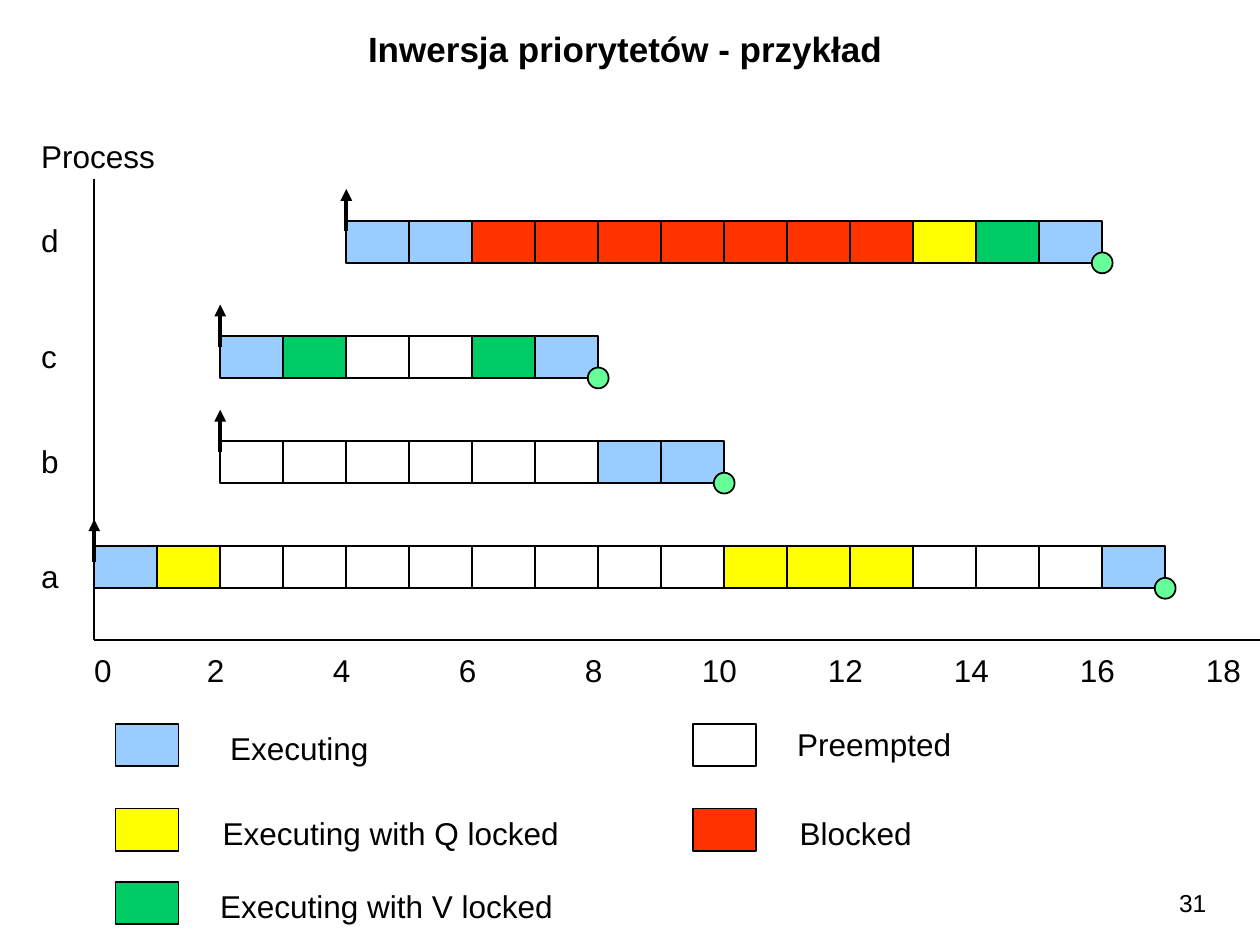
from dataclasses import dataclass

from lxml.etree import SubElement
from pptx import Presentation
from pptx.dml.color import RGBColor
from pptx.enum.shapes import MSO_CONNECTOR, MSO_SHAPE
from pptx.enum.text import MSO_AUTO_SIZE, PP_ALIGN
from pptx.oxml.ns import qn
from pptx.util import Cm, Pt

BLACK = RGBColor(0x00, 0x00, 0x00)
BLUE = RGBColor(0x99, 0xCC, 0xFF)
YELLOW = RGBColor(0xFF, 0xFF, 0x00)
GREEN = RGBColor(0x00, 0xCC, 0x66)
RED = RGBColor(0xFF, 0x33, 0x00)
MINT = RGBColor(0x66, 0xFF, 0x99)

# E executing, Q / V executing with that lock, P preempted, B blocked
STATE_COLORS = {"E": BLUE, "Q": YELLOW, "V": GREEN, "P": None, "B": RED}

# All lengths are in centimetres.
SLIDE_WIDTH, SLIDE_HEIGHT = 25.4, 19.05
AXIS_LEFT, AXIS_TOP, AXIS_BOTTOM = 1.9, 3.6, 12.9
CELL_WIDTH, CELL_HEIGHT = 1.27, 0.85
END_DIAMETER = 0.42
LABEL_LEFT, LABEL_HEIGHT = 0.58, 1.02


@dataclass
class Process:
    name: str
    start: int
    states: str
    top: float
    label_top: float
    arrow_top: float


@dataclass
class LegendEntry:
    state: str
    text: str
    left: float
    top: float
    text_left: float
    text_top: float
    text_width: float


PROCESSES = [
    Process("d", 4, "EEBBBBBBBQVE", 4.45, 4.34, 3.81),
    Process("c", 2, "EVPPVE", 6.77, 6.66, 6.14),
    Process("b", 2, "PPPPPPEE", 8.89, 8.79, 8.26),
    Process("a", 0, "EQPPPPPPPPQQQPPPE", 11.01, 11.1, 10.47),
]

LEGEND = [
    LegendEntry("E", "Executing", 2.33, 14.6, 4.39, 14.58, 3.3),
    LegendEntry("Q", "Executing with Q locked", 2.33, 16.3, 4.24, 16.28, 7.29),
    LegendEntry("V", "Executing with V locked", 2.33, 17.78, 4.19, 17.75, 7.21),
    LegendEntry("P", "Preempted", 13.97, 14.6, 15.82, 14.5, 3.61),
    LegendEntry("B", "Blocked", 13.97, 16.3, 15.87, 16.28, 2.77),
]


def time_x(time: int) -> float:
    """Horizontal place of a moment on the time axis."""
    return AXIS_LEFT + time * CELL_WIDTH


def add_text(page, text: str, left: float, top: float, width: float,
             height: float = LABEL_HEIGHT, size: int = 18, bold: bool = False,
             align=PP_ALIGN.LEFT, wrap: bool = False) -> None:
    box = page.shapes.add_textbox(Cm(left), Cm(top), Cm(width), Cm(height))
    box.text_frame.word_wrap = wrap
    box.text_frame.auto_size = MSO_AUTO_SIZE.NONE
    para = box.text_frame.paragraphs[0]
    para.alignment = align
    span = para.add_run()
    span.text = text
    for name, value in {"name": "Arial", "size": Pt(size), "bold": bold}.items():
        setattr(span.font, name, value)
    span.font.color.rgb = BLACK


def add_outlined(page, kind, left: float, top: float, width: float,
                 height: float, color: RGBColor | None) -> None:
    """Draw a black-edged shape, unfilled when there is no colour."""
    shape = page.shapes.add_shape(kind, Cm(left), Cm(top), Cm(width), Cm(height))
    shape.shadow.inherit = False
    if color is None:
        shape.fill.background()
    else:
        shape.fill.solid()
        shape.fill.fore_color.rgb = color
    shape.line.color.rgb = BLACK
    shape.line.width = Pt(1)


def add_cell(page, left: float, top: float, state: str) -> None:
    add_outlined(page, MSO_SHAPE.RECTANGLE, left, top, CELL_WIDTH, CELL_HEIGHT,
                 STATE_COLORS[state])


def add_line(page, x1: float, y1: float, x2: float, y2: float,
             width: float = 1, arrow: bool = False) -> None:
    """Draw a straight line, with an arrowhead at its first point if asked."""
    line = page.shapes.add_connector(MSO_CONNECTOR.STRAIGHT,
                                     Cm(x1), Cm(y1), Cm(x2), Cm(y2))
    line.line.color.rgb = BLACK
    line.line.width = Pt(width)
    if arrow:
        SubElement(line.line._get_or_add_ln(), qn("a:headEnd"), type="triangle")
    SubElement(line._element.spPr, qn("a:effectLst"))


def add_axes(page) -> None:
    add_line(page, AXIS_LEFT, AXIS_TOP, AXIS_LEFT, AXIS_BOTTOM)
    add_line(page, AXIS_LEFT, AXIS_BOTTOM, SLIDE_WIDTH, AXIS_BOTTOM)
    add_text(page, "Process", LABEL_LEFT, 2.64, 2.79)
    for time in range(0, 19, 2):
        width = 0.86 if time < 10 else 1.22
        shift = -0.09 if time else 0.18
        add_text(page, str(time), time_x(time) + shift - width / 2, 13, width)


def add_process(page, process: Process) -> None:
    """Draw a label, a bar of states, a release arrow and an end mark."""
    add_text(page, process.name, LABEL_LEFT, process.label_top, 0.86)
    for time, state in enumerate(process.states, process.start):
        add_cell(page, time_x(time), process.top, state)
    start_x = time_x(process.start)
    add_line(page, start_x, process.arrow_top,
             start_x, process.arrow_top + CELL_HEIGHT, 2.25, arrow=True)
    end_x = time_x(process.start + len(process.states))
    add_outlined(page, MSO_SHAPE.OVAL, end_x - END_DIAMETER / 2,
                 process.top + CELL_HEIGHT - END_DIAMETER / 2,
                 END_DIAMETER, END_DIAMETER, MINT)


def add_legend_entry(page, entry: LegendEntry) -> None:
    add_cell(page, entry.left, entry.top, entry.state)
    add_text(page, entry.text, entry.text_left, entry.text_top, entry.text_width)


def main() -> None:
    deck = Presentation()
    deck.slide_width, deck.slide_height = Cm(SLIDE_WIDTH), Cm(SLIDE_HEIGHT)
    page = deck.slides.add_slide(deck.slide_layouts[6])
    add_text(page, "Inwersja priorytetów - przykład", 0.64, 0.43, 23.93, 1.09,
             size=20, bold=True, align=PP_ALIGN.CENTER, wrap=True)
    add_axes(page)
    for process in PROCESSES:
        add_process(page, process)
    for entry in LEGEND:
        add_legend_entry(page, entry)
    add_text(page, "31", 22.23, 17.78, 2.34, 0.85, size=14,
             align=PP_ALIGN.RIGHT, wrap=True)
    deck.save("out.pptx")


if __name__ == "__main__":
    main()
